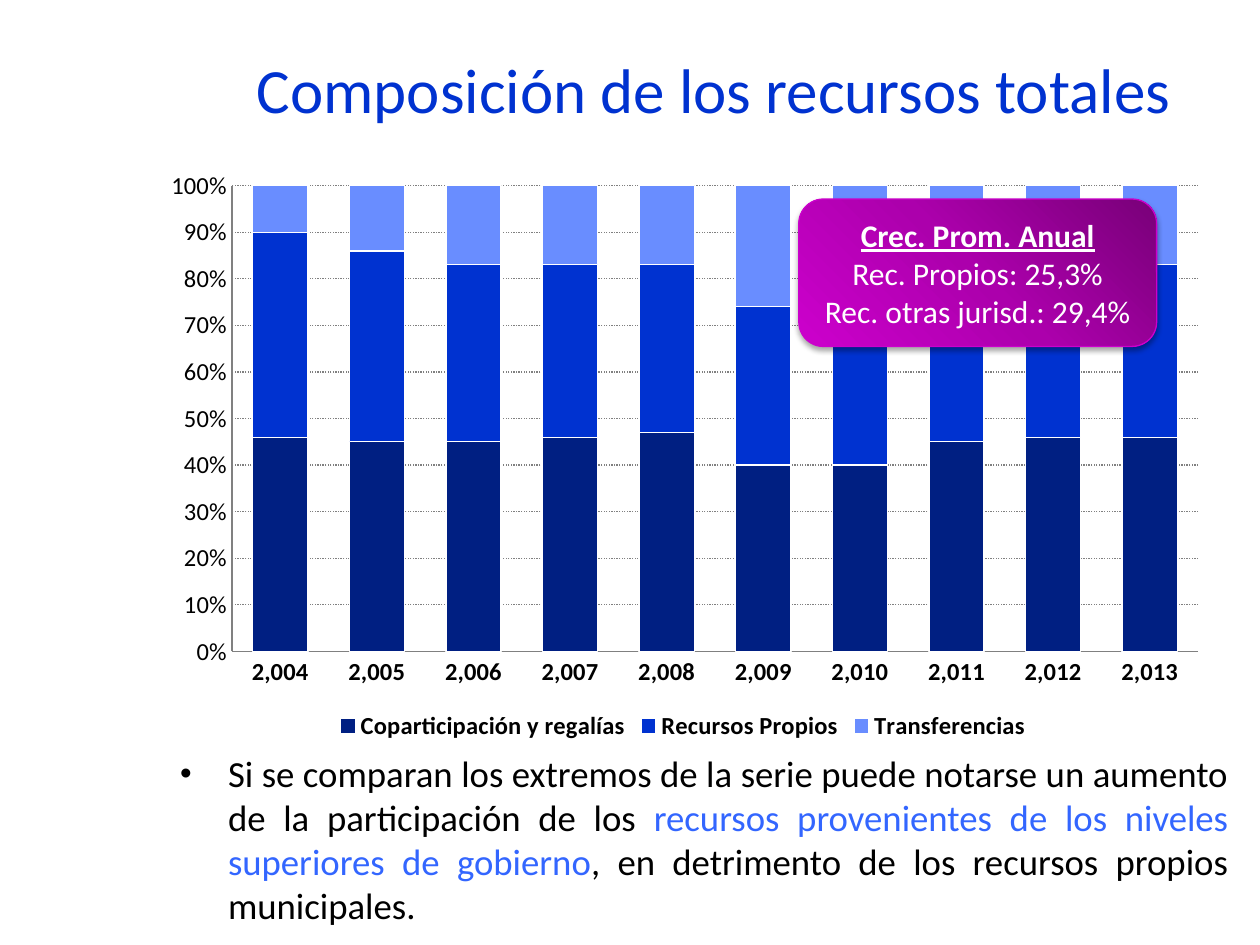
from lxml import etree
from pptx import Presentation
from pptx.chart.data import CategoryChartData as Data
from pptx.dml.color import RGBColor
from pptx.enum.chart import XL_CHART_TYPE as Kind, XL_LEGEND_POSITION as Side, XL_TICK_MARK as Tick
from pptx.enum.dml import MSO_LINE as Dash
from pptx.enum.shapes import MSO_SHAPE as Shape
from pptx.enum.text import MSO_ANCHOR as Anchor, MSO_AUTO_SIZE as Fit, PP_ALIGN as Align
from pptx.oxml import parse_xml
from pptx.oxml.ns import qn
from pptx.util import Inches, Pt

DRAW = 'xmlns:a="http://schemas.openxmlformats.org/drawingml/2006/main"'
PLOT = 'xmlns:c="http://schemas.openxmlformats.org/drawingml/2006/chart"'
NAVY, BLUE, PALE, GREY = "001F82", "0032D0", "698DFF", "808080"
YEARS = range(2004, 2014)
SERIES = [
    ("Coparticipación y regalías", NAVY, (46, 45, 45, 46, 47, 40, 40, 45, 46, 46)),
    ("Recursos Propios", BLUE, (44, 41, 38, 37, 36, 34, 32, 34, 37, 37)),
    ("Transferencias", PALE, (10, 14, 17, 17, 17, 26, 28, 21, 17, 17)),
]


def tint(code):
    """Turn a hex string into a colour."""
    return RGBColor.from_string(code)


def style(font, size=14, color="000000", bold=False, under=False):
    """Format a font."""
    font.name, font.size, font.bold, font.underline = "Calibri", Pt(size), bold, under
    font.color.rgb = tint(color)


def write(para, text, **form):
    """Add a formatted run to a paragraph."""
    run = para.add_run()
    run.text = text
    style(run.font, **form)


def place(shape, box):
    """Move a shape to a box given in inches."""
    shape.left, shape.top, shape.width, shape.height = map(Inches, box)


def add_title(slide, box):
    """Fill the title placeholder."""
    title = slide.shapes.title
    place(title, box)
    frame = title.text_frame
    frame.vertical_anchor, frame.auto_size = Anchor.MIDDLE, Fit.NONE
    para = frame.paragraphs[0]
    para.alignment = Align.CENTER
    write(para, "Composición de los recursos totales", size=36, color=BLUE)


def set_plot(chart, box):
    """Fix the inner plot area as fractions of the chart."""
    parts = "".join(f'<c:{tag} val="{val}"/>' for tag, val in zip("xywh", box))
    layout = parse_xml(
        f'<c:layout {PLOT}><c:manualLayout><c:layoutTarget val="inner"/>'
        f'<c:xMode val="edge"/><c:yMode val="edge"/>{parts}</c:manualLayout></c:layout>')
    area = chart._chartSpace.chart.plotArea
    for old in area.findall(qn("c:layout")):
        area.remove(old)
    area.insert(0, layout)


def set_axis(axis, form, bold):
    """Format one axis."""
    axis.major_tick_mark = axis.minor_tick_mark = Tick.NONE
    axis.format.line.color.rgb = tint(GREY)
    axis.format.line.width = Pt(0.75)
    labels = axis.tick_labels
    labels.number_format, labels.number_format_is_linked = form, False
    style(labels.font, bold=bold)


def add_bars(slide, box):
    """Draw the stacked column chart."""
    data = Data()
    data.categories = YEARS
    data.categories.number_format = "#,##0"
    for name, _, vals in SERIES:
        data.add_series(name, vals)
    chart = slide.shapes.add_chart(
        Kind.COLUMN_STACKED_100, *map(Inches, box), data).chart
    style(chart.font, size=10)
    chart.has_title = False
    chart.has_legend = True
    legend = chart.legend
    legend.position, legend.include_in_layout = Side.BOTTOM, False
    style(legend.font, bold=True)
    plot = chart.plots[0]
    plot.gap_width, plot.overlap, plot.vary_by_categories = 75, 100, False
    for item, (_, color, _) in zip(plot.series, SERIES):
        item.format.fill.solid()
        item.format.fill.fore_color.rgb = tint(color)
        item.format.line.color.rgb = tint("FFFFFF")
        item.format.line.width = Pt(0.75)
    set_axis(chart.category_axis, "#,##0", True)
    axis = chart.value_axis
    set_axis(axis, "0%", False)
    axis.minimum_scale, axis.maximum_scale, axis.major_unit = 0, 1, 0.1
    grid = axis.major_gridlines.format.line
    grid.color.rgb, grid.width, grid.dash_style = tint(GREY), Pt(0.75), Dash.ROUND_DOT
    set_plot(chart, (0.08, 0.05, 0.9, 0.79))


def add_list(slide, box):
    """Fill the body placeholder with the bulleted remark."""
    body = slide.placeholders[1]
    place(body, box)
    frame = body.text_frame
    frame.word_wrap, frame.auto_size, frame.vertical_anchor = True, Fit.NONE, Anchor.TOP
    para = frame.paragraphs[0]
    para.alignment, para.space_before = Align.JUSTIFY, Pt(0)
    props = para._p.get_or_add_pPr()
    props.set("marL", str(Inches(0.38)))
    props.set("indent", str(Inches(-0.38)))
    etree.SubElement(props, qn("a:buSzPct")).set("val", "90000")
    etree.SubElement(props, qn("a:buFont")).set("typeface", "Arial")
    etree.SubElement(props, qn("a:buChar")).set("char", "•")
    for text, color in (
        ("Si se comparan los extremos de la serie puede notarse un aumento "
         "de la participación de los ", "000000"),
        ("recursos provenientes de los niveles superiores de gobierno", "3366FF"),
        (", en detrimento de los recursos propios municipales.", "000000"),
    ):
        write(para, text, size=21, color=color)


def add_note(slide, box):
    """Draw the growth callout with its gradient and shadow."""
    note = slide.shapes.add_shape(Shape.ROUNDED_RECTANGLE, *map(Inches, box))
    note.shadow.inherit = False
    note.line.color.rgb, note.line.width = tint("CC00CC"), Pt(0.75)
    stops = "".join(
        f'<a:gs pos="{pos}000"><a:srgbClr val="{color}"/></a:gs>'
        for pos, color in ((0, "790079"), (50, "AC00AC"), (100, "CC00CC")))
    fill = parse_xml(
        f'<a:gradFill {DRAW} rotWithShape="1"><a:gsLst>{stops}</a:gsLst><a:path path="circle">'
        '<a:fillToRect l="100000" b="100000"/></a:path></a:gradFill>')
    props = note._element.spPr
    props.find(qn("a:prstGeom")).addnext(fill)
    props.find(qn("a:effectLst")).append(parse_xml(
        f'<a:outerShdw {DRAW} blurRad="{Pt(3.1)}" dist="{Pt(1.8)}" dir="5400000" '
        'rotWithShape="0"><a:srgbClr val="000000"><a:alpha val="35000"/></a:srgbClr>'
        '</a:outerShdw>'))
    frame = note.text_frame
    frame.word_wrap, frame.vertical_anchor = True, Anchor.MIDDLE
    lines = ("Crec. Prom. Anual", "Rec. Propios: 25,3%", "Rec. otras jurisd.: 29,4%")
    for row, text in enumerate(lines):
        para = frame.add_paragraph() if row else frame.paragraphs[0]
        para.alignment = Align.CENTER
        write(para, text, size=18, color="FFFFFF", bold=row == 0, under=row == 0)


def main():
    """Build and save the slide."""
    deck = Presentation()
    deck.slide_width, deck.slide_height = Inches(10), Inches(7.5)
    slide = deck.slides.add_slide(deck.slide_layouts[1])
    add_title(slide, (1.83, 0.08, 7.67, 1.25))
    add_bars(slide, (1.16, 1.24, 8.52, 4.68))
    add_list(slide, (1.33, 5.91, 8.52, 1.51))
    add_note(slide, (6.34, 1.58, 2.84, 1.17))
    deck.save("out.pptx")


if __name__ == "__main__":
    main()
